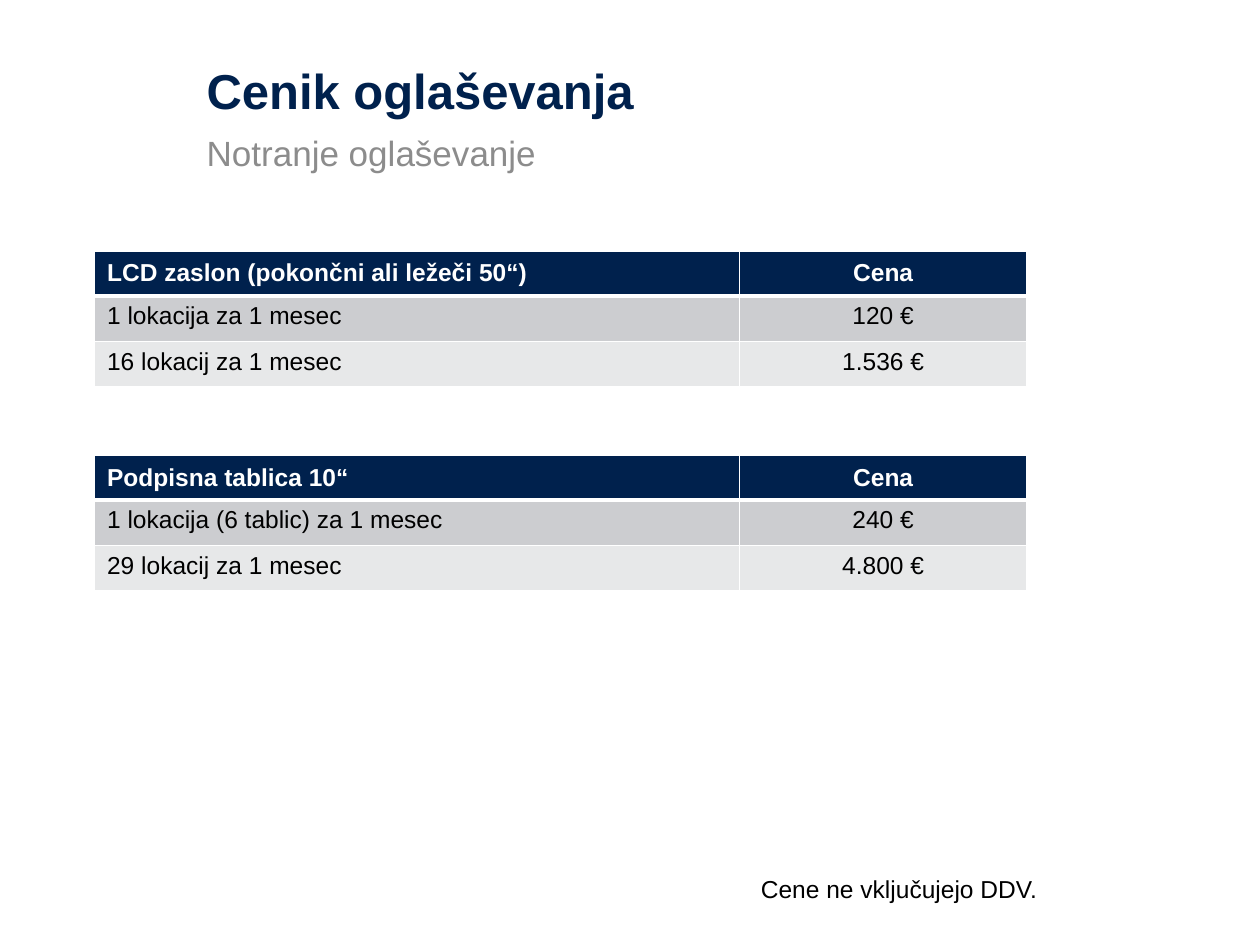
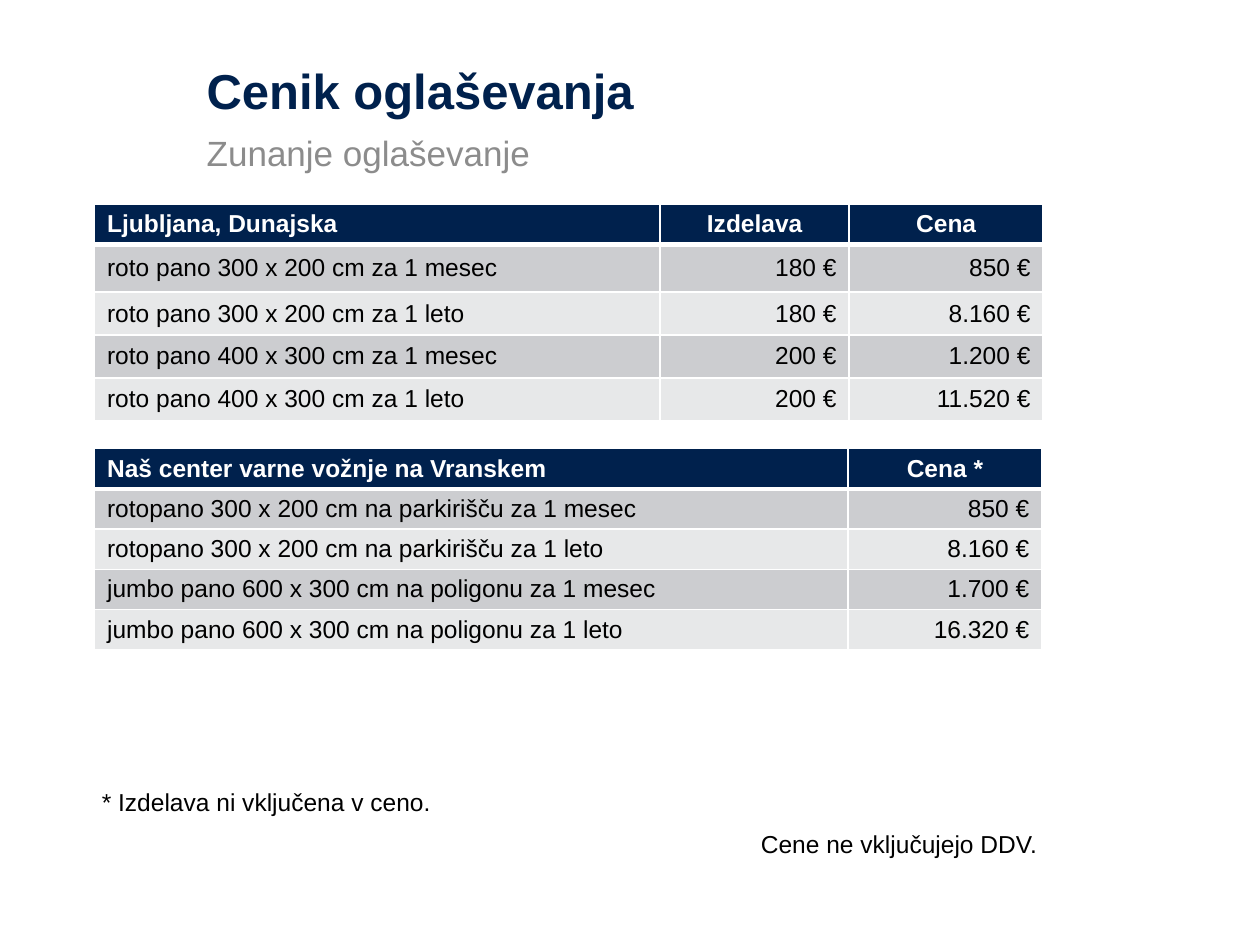
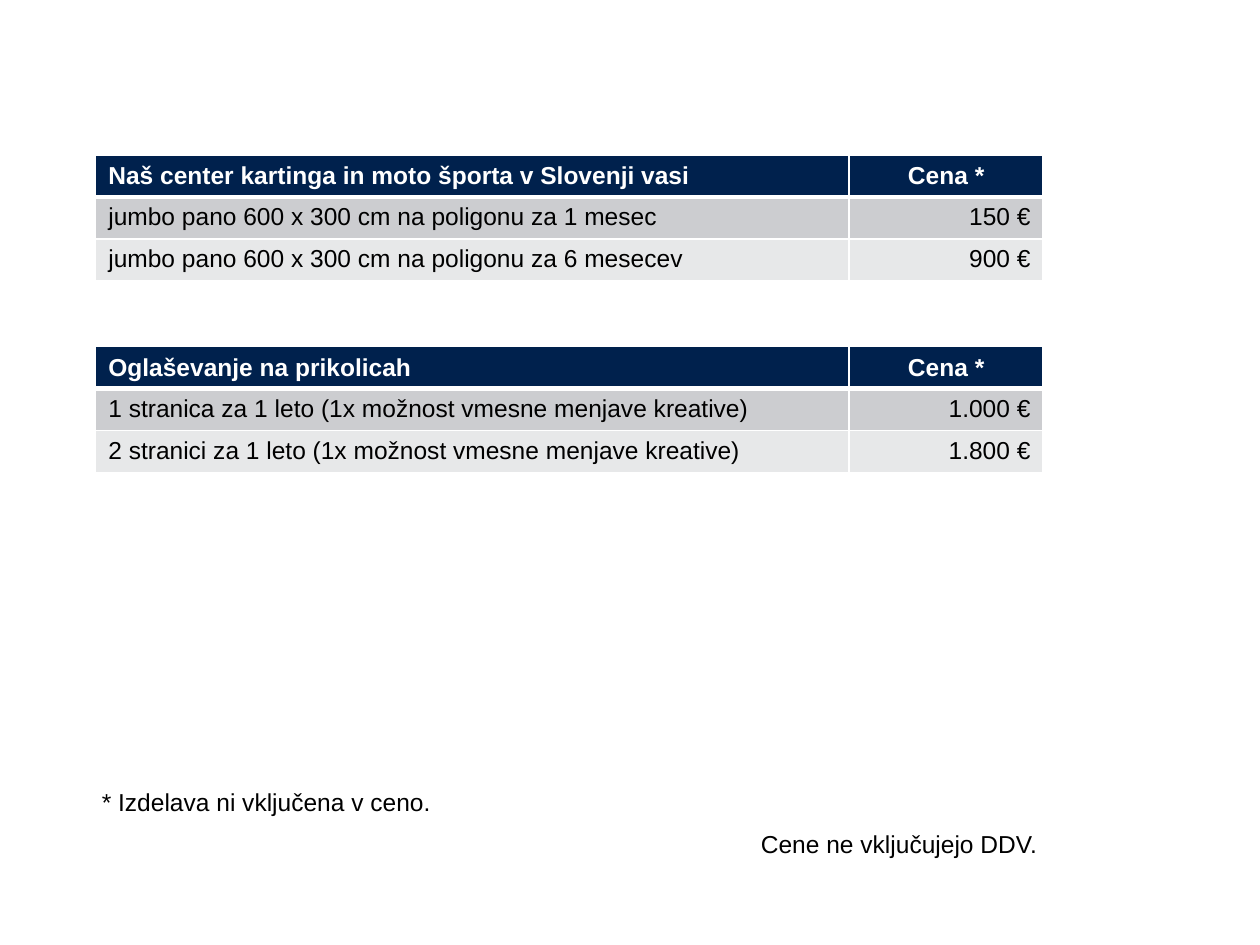
from lxml import etree
from pptx import Presentation
from pptx import util as u
from pptx.dml.color import RGBColor
from pptx.enum import text
from pptx.oxml.ns import qn

COLOURS = {"navy": "00214D", "grey": "8C8C8C", "white": "FFFFFF",
           "black": "000000", "dark band": "CCCDD0", "light band": "E7E8E9"}
FONT = "Arial"
LEFT, CENTRE, RIGHT = text.PP_ALIGN.LEFT, text.PP_ALIGN.CENTER, text.PP_ALIGN.RIGHT
TOP, MIDDLE = text.MSO_ANCHOR.TOP, text.MSO_ANCHOR.MIDDLE

TITLE = "Cenik oglaševanja"
MADE_NOTE = "* Izdelava ni vključena v ceno."
TAX_NOTE = "Cene ne vključujejo DDV."
TITLE_BOX = (1.54, 0.44, 7.63, 0.55)
SUBTITLE_BOX = (1.54, 0.99, 7.64, 0.47)
MADE_BOX = (0.71, 6.2, 2.83, 0.34)
TAX_BOX = (5.94, 6.53, 2.41, 0.34)
LOW_TAX_BOX = (5.94, 6.89, 2.41, 0.34)

INDOOR = {"columns": (5.12, 2.28), "heights": [0.36] * 3, "prices": CENTRE}
OUTDOOR = {"columns": (5.98, 1.54), "prices": RIGHT}

SLIDES = [
    {"subtitle": "Notranje oglaševanje",
     "notes": [(TAX_NOTE, LOW_TAX_BOX)],
     "tables": [
         {**INDOOR, "at": (0.75, 1.99), "rows": [
             ("LCD zaslon (pokončni ali ležeči 50“)", "Cena"),
             ("1 lokacija za 1 mesec", "120 €"),
             ("16 lokacij za 1 mesec", "1.536 €")]},
         {**INDOOR, "at": (0.75, 3.61), "rows": [
             ("Podpisna tablica 10“", "Cena"),
             ("1 lokacija (6 tablic) za 1 mesec", "240 €"),
             ("29 lokacij za 1 mesec", "4.800 €")]}]},
    {"subtitle": "Zunanje oglaševanje",
     "notes": [(MADE_NOTE, MADE_BOX), (TAX_NOTE, TAX_BOX)],
     "tables": [
         {"at": (0.75, 1.62), "columns": (4.49, 1.5, 1.54), "prices": RIGHT,
          "heights": [0.31, 0.38, 0.34, 0.34, 0.34], "anchor": MIDDLE, "rows": [
              ("Ljubljana, Dunajska", "Izdelava", "Cena"),
              ("roto pano 300 x 200 cm za 1 mesec", "180 €", "850 €"),
              ("roto pano 300 x 200 cm za 1 leto", "180 €", "8.160 €"),
              ("roto pano 400 x 300 cm za 1 mesec", "200 €", "1.200 €"),
              ("roto pano 400 x 300 cm za 1 leto", "200 €", "11.520 €")]},
         {**OUTDOOR, "at": (0.75, 3.56), "heights": [0.32] * 5, "rows": [
             ("Naš center varne vožnje na Vranskem", "Cena *"),
             ("rotopano 300 x 200 cm na parkirišču za 1 mesec", "850 €"),
             ("rotopano 300 x 200 cm na parkirišču za 1 leto", "8.160 €"),
             ("jumbo pano 600 x 300 cm na poligonu za 1 mesec", "1.700 €"),
             ("jumbo pano 600 x 300 cm na poligonu za 1 leto", "16.320 €")]}]},
    {"notes": [(MADE_NOTE, MADE_BOX), (TAX_NOTE, TAX_BOX)],
     "tables": [
         {**OUTDOOR, "at": (0.76, 1.23), "heights": [0.32] * 3, "rows": [
             ("Naš center kartinga in moto športa v Slovenji vasi", "Cena *"),
             ("jumbo pano 600 x 300 cm na poligonu za 1 mesec", "150 €"),
             ("jumbo pano 600 x 300 cm na poligonu za 6 mesecev", "900 €")]},
         {**OUTDOOR, "at": (0.76, 2.75), "heights": [0.32] * 3, "rows": [
             ("Oglaševanje na prikolicah", "Cena *"),
             ("1 stranica za 1 leto (1x možnost vmesne menjave kreative)", "1.000 €"),
             ("2 stranici za 1 leto (1x možnost vmesne menjave kreative)", "1.800 €")]}]},
]


def colour(name):
    return RGBColor.from_string(COLOURS[name])


def write(frame, words, size, ink, bold=False, align=LEFT):
    frame.text = words
    para = frame.paragraphs[0]
    para.alignment = align
    para.space_before = u.Pt(0)
    para.font.name, para.font.size, para.font.bold = FONT, u.Pt(size), bold
    para.font.color.rgb = colour(ink)


def fill_placeholder(shape, words, place, anchor, **style):
    shape.left, shape.top, shape.width, shape.height = map(u.Inches, place)
    shape.text_frame.vertical_anchor = anchor
    shape.text_frame.auto_size = text.MSO_AUTO_SIZE.NONE
    write(shape.text_frame, words, **style)


def add_note(page, words, place):
    frame = page.shapes.add_textbox(*map(u.Inches, place)).text_frame
    frame.word_wrap = False
    frame.auto_size = text.MSO_AUTO_SIZE.SHAPE_TO_FIT_TEXT
    write(frame, words, 14, "black")


def set_borders(cell, bottom):
    """Rule the cell in white, 1 pt on all sides but the bottom."""
    properties = cell._tc.get_or_add_tcPr()
    for side, points in (("L", 1), ("R", 1), ("T", 1), ("B", bottom)):
        line = etree.SubElement(properties, qn("a:ln" + side), w=str(u.Pt(points)))
        solid = etree.SubElement(line, qn("a:solidFill"))
        etree.SubElement(solid, qn("a:srgbClr"), val=COLOURS["white"])


def add_price_table(page, at, columns, heights, prices, rows, anchor=TOP):
    size = (sum(columns), sum(heights))
    table = page.shapes.add_table(len(rows), len(columns),
                                  *map(u.Inches, at + size)).table
    table.horz_banding = False
    for column, width in zip(table.columns, columns):
        column.width = u.Inches(width)
    for number, (row, height, words) in enumerate(zip(table.rows, heights, rows)):
        row.height = u.Inches(height)
        header = number == 0
        band = "navy" if header else ("light band", "dark band")[number % 2]
        for position, (cell, word) in enumerate(zip(row.cells, words)):
            set_borders(cell, bottom=3 if header else 1)
            cell.fill.solid()
            cell.fill.fore_color.rgb = colour(band)
            cell.vertical_anchor = MIDDLE if header else anchor
            align = LEFT if position == 0 else CENTRE if header else prices
            write(cell.text_frame, word, 14, "white" if header else "black",
                  header, align)


def main():
    deck = Presentation()
    deck.slide_width, deck.slide_height = u.Inches(10), u.Inches(7.5)
    title_layout, blank_layout = deck.slide_layouts[0], deck.slide_layouts[6]
    for content in SLIDES:
        titled = "subtitle" in content
        page = deck.slides.add_slide(title_layout if titled else blank_layout)
        if titled:
            fill_placeholder(page.shapes.title, TITLE, TITLE_BOX, MIDDLE,
                             size=28, ink="navy", bold=True)
            fill_placeholder(page.placeholders[1], content["subtitle"],
                             SUBTITLE_BOX, TOP, size=20, ink="grey")
        for table in content["tables"]:
            add_price_table(page, **table)
        for words, place in content["notes"]:
            add_note(page, words, place)
    deck.save("out.pptx")


if __name__ == "__main__":
    main()
